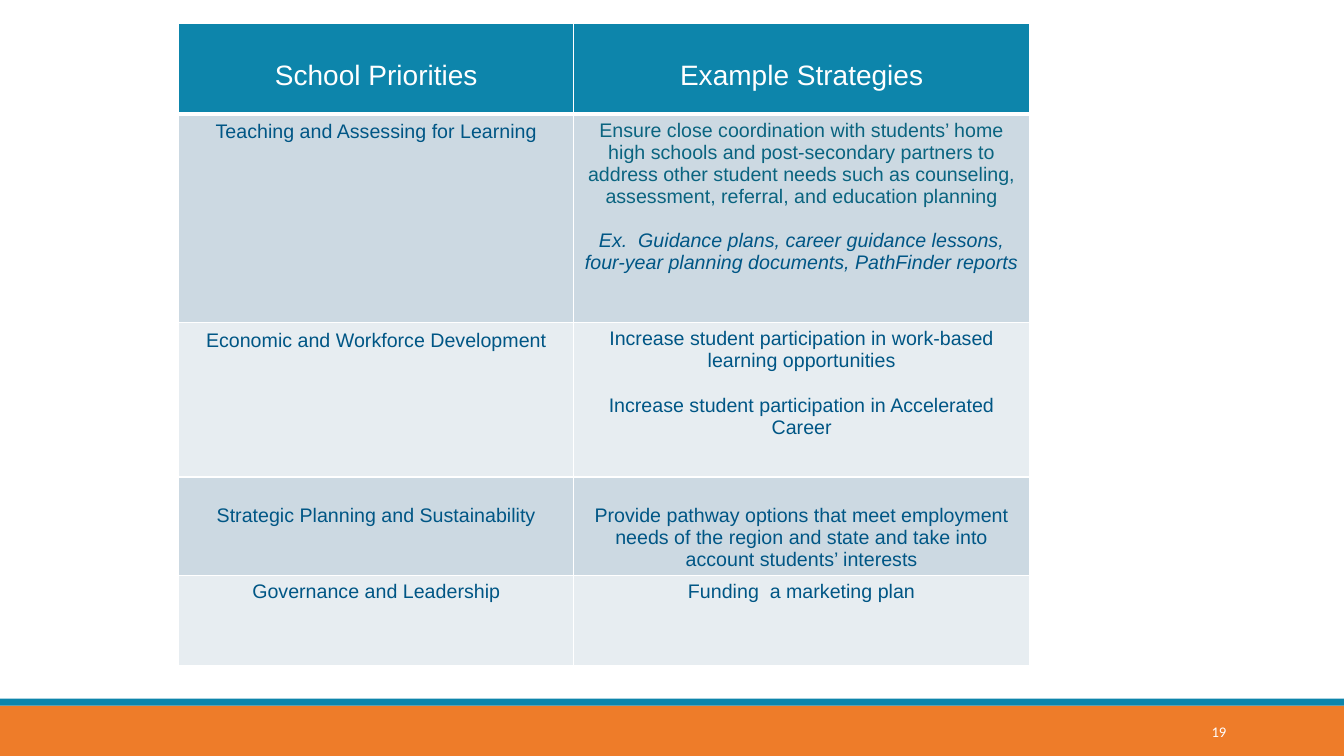
from dataclasses import dataclass

from lxml import etree
from pptx import Presentation
from pptx.dml.color import RGBColor
from pptx.enum.shapes import MSO_SHAPE
from pptx.enum.text import MSO_ANCHOR, PP_ALIGN
from pptx.oxml.ns import qn
from pptx.util import Inches, Pt

RECT = MSO_SHAPE.RECTANGLE
CENTER, RIGHT = PP_ALIGN.CENTER, PP_ALIGN.RIGHT
MIDDLE = MSO_ANCHOR.MIDDLE
WIDE, HIGH = Inches(13.33), Inches(7.5)


@dataclass(frozen=True)
class Theme:
    white: str = "FFFFFF"
    teal: str = "0D85AB"
    deep: str = "0A6480"
    navy: str = "005685"
    orange: str = "EE7C29"
    bands: tuple = ("CCD9E2", "E7EDF1")
    font: str = "Arial"
    small: str = "Calibri"
    head: float = 20
    body: float = 14
    page: float = 10.5
    gap: float = 16


THEME = Theme()


@dataclass
class Para:
    text: str
    color: str = THEME.navy
    italic: bool = False
    spaced: bool = False


@dataclass
class Row:
    height: float  # percent of slide height
    pad: float  # top margin, percent of slide height
    left: Para
    right: list


COLS = (29.4, 33.9)  # percent of slide width
ROWS = [
    Row(12, 4.8, Para("School Priorities", THEME.white),
        [Para("Example Strategies", THEME.white)]),
    Row(27.6, 0.67, Para("Teaching and Assessing for Learning", spaced=True), [
        Para("Ensure close coordination with students’ home high schools and "
             "post-secondary partners to address other student needs such as "
             "counseling, assessment, referral, and education planning",
             THEME.deep),
        Para("Ex.  Guidance plans, career guidance lessons, four-year "
             "planning documents, PathFinder reports", italic=True)]),
    Row(20.4, 0.67, Para("Economic and Workforce Development", spaced=True), [
        Para("Increase student participation in work-based learning "
             "opportunities"),
        Para("Increase student participation in Accelerated Career")]),
    Row(12.9, 3.6, Para("Strategic Planning and Sustainability"), [
        Para("Provide pathway options that meet employment needs of the "
             "region and state and take into account students’ interests")]),
    Row(12, 0.67, Para("Governance and Leadership"),
        [Para("Funding  a marketing plan")]),
]


def across(pct):
    return int(WIDE * pct / 100)


def down(pct):
    return int(HIGH * pct / 100)


def rgb(code):
    return RGBColor.from_string(code)


def style(para, size, color, name=THEME.font, italic=False):
    font = para.font
    font.name, font.size = name, Pt(size)
    font.bold, font.italic = False, italic
    font.color.rgb = rgb(color)


def add_band(slide, top, height, color):
    band = slide.shapes.add_shape(RECT, 0, down(top), WIDE, down(height))
    band.shadow.inherit = False
    band.fill.solid()
    band.fill.fore_color.rgb = rgb(color)
    band.line.fill.background()


def add_edges(cell, base):
    """White borders; base is the width of the lower one in points."""
    props = cell._tc.get_or_add_tcPr()
    widths = {"a:lnL": 1, "a:lnR": 1, "a:lnT": 1, "a:lnB": base}
    for spot, (tag, width) in enumerate(widths.items()):
        edge = etree.Element(qn(tag), w=str(Pt(width)))
        fill = etree.SubElement(edge, qn("a:solidFill"))
        etree.SubElement(fill, qn("a:srgbClr"), val=THEME.white)
        props.insert(spot, edge)


def fill_cell(cell, paras, size, pad, color, base):
    cell.fill.solid()
    cell.fill.fore_color.rgb = rgb(color)
    cell.margin_top = down(pad)
    add_edges(cell, base)
    frame = cell.text_frame
    for n, item in enumerate(paras):
        para = frame.add_paragraph() if n else frame.paragraphs[0]
        para.text = item.text
        para.alignment = CENTER
        if n:
            para.space_before = Pt(THEME.gap)
        if item.spaced:
            para.line_spacing, para.space_after = 1.07, Pt(8)
        style(para, size, item.color, italic=item.italic)


def add_grid(slide, left, top):
    tall = sum(row.height for row in ROWS)
    table = slide.shapes.add_table(
        len(ROWS), len(COLS), across(left), down(top),
        across(sum(COLS)), down(tall)).table
    table.first_row = table.horz_banding = False
    for col, width in zip(table.columns, COLS):
        col.width = across(width)
    for r, row in enumerate(ROWS):
        table.rows[r].height = down(row.height)
        size = THEME.body if r else THEME.head
        color = THEME.bands[(r - 1) % 2] if r else THEME.teal
        for c, paras in enumerate(([row.left], row.right)):
            fill_cell(table.cell(r, c), paras, size, row.pad, color,
                      1 if r else 3)


def add_page(slide, text):
    box = slide.shapes.add_textbox(
        across(81.25), down(94.13), across(10.73), down(5.33))
    frame = box.text_frame
    frame.word_wrap = True
    frame.vertical_anchor = MIDDLE
    para = frame.paragraphs[0]
    para.text = text
    para.alignment = RIGHT
    style(para, THEME.page, THEME.white, THEME.small)


def main():
    deck = Presentation()
    deck.slide_width, deck.slide_height = WIDE, HIGH
    slide = deck.slides.add_slide(deck.slide_layouts[6])
    # Footer bands
    add_band(slide, 93.33, 6.67, THEME.orange)
    add_band(slide, 92.4, 0.93, THEME.teal)
    # Priorities and strategies
    add_grid(slide, 13.3, 3.1)
    # Page number
    add_page(slide, "19")
    deck.save("out.pptx")


if __name__ == "__main__":
    main()
